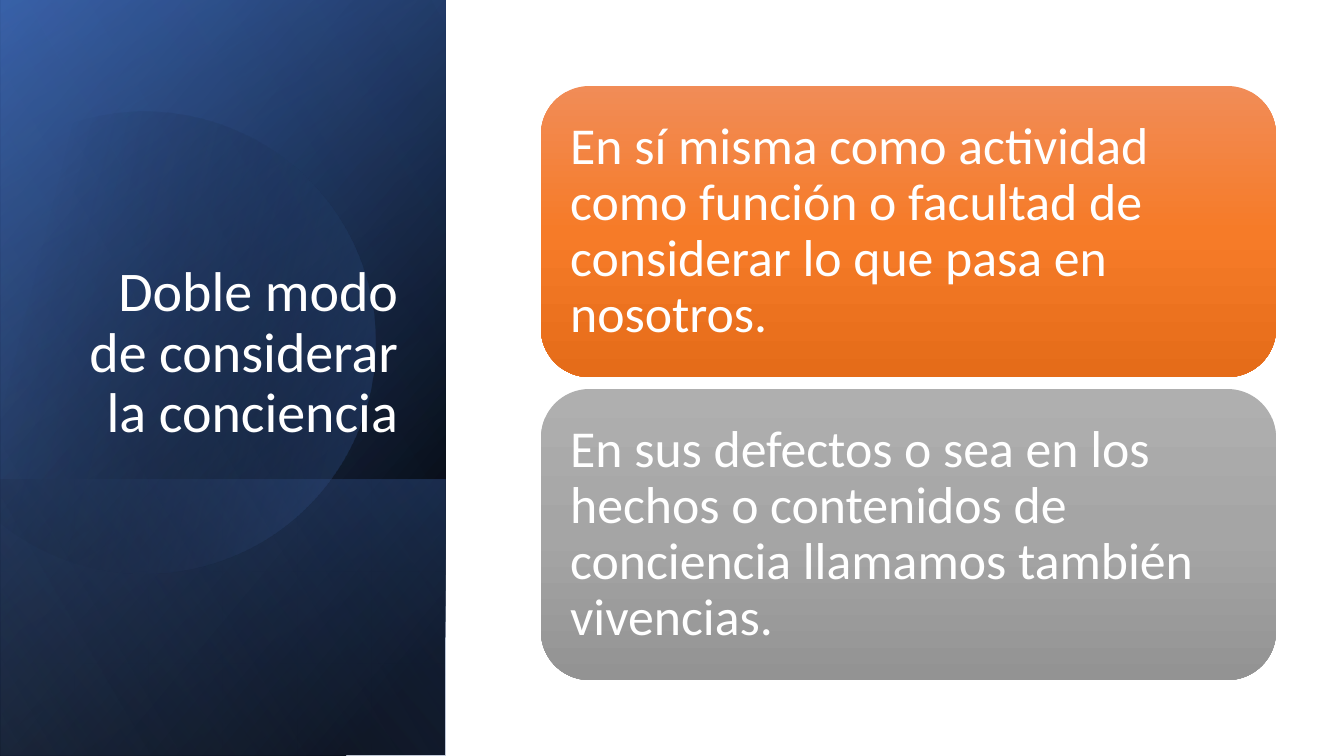
"""Build a slide on the two ways of considering consciousness."""
import math

import lxml.etree
import pptx
import pptx.dml.color
import pptx.enum.shapes
import pptx.enum.text
import pptx.oxml.ns
import pptx.util

RGBColor = pptx.dml.color.RGBColor
MSO_SHAPE = pptx.enum.shapes.MSO_SHAPE
PP_ALIGN = pptx.enum.text.PP_ALIGN
MSO_ANCHOR = pptx.enum.text.MSO_ANCHOR
qn = pptx.oxml.ns.qn

PX = 914400 / 100.8
BLACK = RGBColor(0x00, 0x00, 0x00)
WHITE = RGBColor(0xFF, 0xFF, 0xFF)
BLUE = RGBColor(0x44, 0x72, 0xC4)
DARK_BLUE = RGBColor(0x2F, 0x55, 0x97)
LIGHT_BLUE = RGBColor(0x8F, 0xAA, 0xDC)
ORANGES = [RGBColor(0xF1, 0x8C, 0x57), RGBColor(0xF6, 0x7B, 0x28), RGBColor(0xE5, 0x6C, 0x19)]
GRAYS = [RGBColor(0xAF, 0xAF, 0xAF), RGBColor(0xA5, 0xA5, 0xA5), RGBColor(0x93, 0x93, 0x93)]


def paint_gradient(shape, angle, stops):
    """Fill with (position, colour, opacity) stops, without line or shadow."""
    shape.shadow.inherit = False
    shape.line.fill.background()
    shape.fill.gradient()
    gradient = shape._element.spPr.find(qn("a:gradFill"))
    gradient.set("rotWithShape", "1")
    for child in list(gradient):
        gradient.remove(child)
    stop_list = lxml.etree.SubElement(gradient, qn("a:gsLst"))
    for position, color, opacity in stops:
        stop = lxml.etree.SubElement(stop_list, qn("a:gs"), pos=str(position * 1000))
        color_element = lxml.etree.SubElement(stop, qn("a:srgbClr"), val=str(color))
        if opacity < 100:
            lxml.etree.SubElement(color_element, qn("a:alpha"), val=str(opacity * 1000))
    lxml.etree.SubElement(gradient, qn("a:lin"), ang=str(angle * 60000), scaled="0")


def write_text(shape, text, *, size, align, anchor, inset):
    """Put one wrapped white paragraph in a shape."""
    frame = shape.text_frame
    frame.word_wrap = True
    frame.vertical_anchor = anchor
    frame.margin_left = frame.margin_right = round(inset * PX)
    frame.margin_top = frame.margin_bottom = round(inset * PX / 2)
    paragraph = frame.paragraphs[0]
    paragraph.text = text
    paragraph.alignment = align
    paragraph.line_spacing = 0.9
    paragraph.font.name = "Calibri"
    paragraph.font.size = pptx.util.Pt(size)
    paragraph.font.color.rgb = WHITE


presentation = pptx.Presentation()
presentation.slide_width = round(1344 * PX)
presentation.slide_height = round(756 * PX)
slide = presentation.slides.add_slide(presentation.slide_layouts[6])

FULL_PANEL = (-155, 155, 756, 445)
LOWER_PANEL = (85, 395, 276, 445)
panels = [
    (FULL_PANEL, 50, [(8, BLACK, 100), (100, DARK_BLUE, 100)]),
    (FULL_PANEL, 30, [(0, BLACK, 0), (99, BLUE, 46)]),
    (LOWER_PANEL, 130, [(2, BLUE, 29), (100, BLACK, 30)]),
    (FULL_PANEL, 120, [(0, BLACK, 0), (99, LIGHT_BLUE, 11)]),
]
for box, angle, stops in panels:
    panel = slide.shapes.add_shape(MSO_SHAPE.RECTANGLE, *[round(length * PX) for length in box])
    panel.rotation = 90
    panel._element.spPr.find(qn("a:xfrm")).set("flipH", "1")
    paint_gradient(panel, angle, stops)

center_x, center_y, radius = 144 * PX, 338 * PX, 231 * PX
knots = [math.radians(degree) for degree in (-117, -90, 0, 90, 149)]
points = [
    (round(center_x + radius * math.cos(knot)), round(center_y + radius * math.sin(knot)))
    for knot in knots
]
builder = slide.shapes.build_freeform(*points[0])
builder.add_line_segments(points[1:], close=True)
circle = builder.convert_to_shape()
segments = list(circle._element.iter(qn("a:lnTo")))
for segment, start, end in zip(segments, knots, knots[1:]):
    segment.tag = qn("a:cubicBezTo")
    handle = 4 / 3 * math.tan((end - start) / 4)
    for position, (knot, reach) in enumerate([(start, handle), (end, -handle)]):
        x = center_x + radius * (math.cos(knot) - reach * math.sin(knot)) - circle.left
        y = center_y + radius * (math.sin(knot) + reach * math.cos(knot)) - circle.top
        control = lxml.etree.Element(qn("a:pt"), x=str(round(x)), y=str(round(y)))
        segment.insert(position, control)
circle.rotation = 343.9
paint_gradient(circle, 30, [(29, BLACK, 0), (100, BLUE, 43)])
panel._element.addprevious(circle._element)

title = slide.shapes.add_textbox(*[round(length * PX) for length in (64, 186, 344, 264)])
write_text(title, "Doble modo de considerar la conciencia", size=40,
           align=PP_ALIGN.RIGHT, anchor=MSO_ANCHOR.BOTTOM, inset=10)

cards = [
    ("En sí misma como actividad como función o facultad de considerar lo que pasa en nosotros.",
     ORANGES),
    ("En sus defectos o sea en los hechos o contenidos de conciencia llamamos también vivencias.",
     GRAYS),
]
for index, (text, colors) in enumerate(cards):
    box = (541, 86 + 303 * index, 735, 291)
    card = slide.shapes.add_shape(MSO_SHAPE.ROUNDED_RECTANGLE,
                                  *[round(length * PX) for length in box])
    paint_gradient(card, 90, [(50 * step, color, 100) for step, color in enumerate(colors)])
    write_text(card, text, size=37, align=PP_ALIGN.LEFT, anchor=MSO_ANCHOR.MIDDLE, inset=15)

presentation.save("out.pptx")
